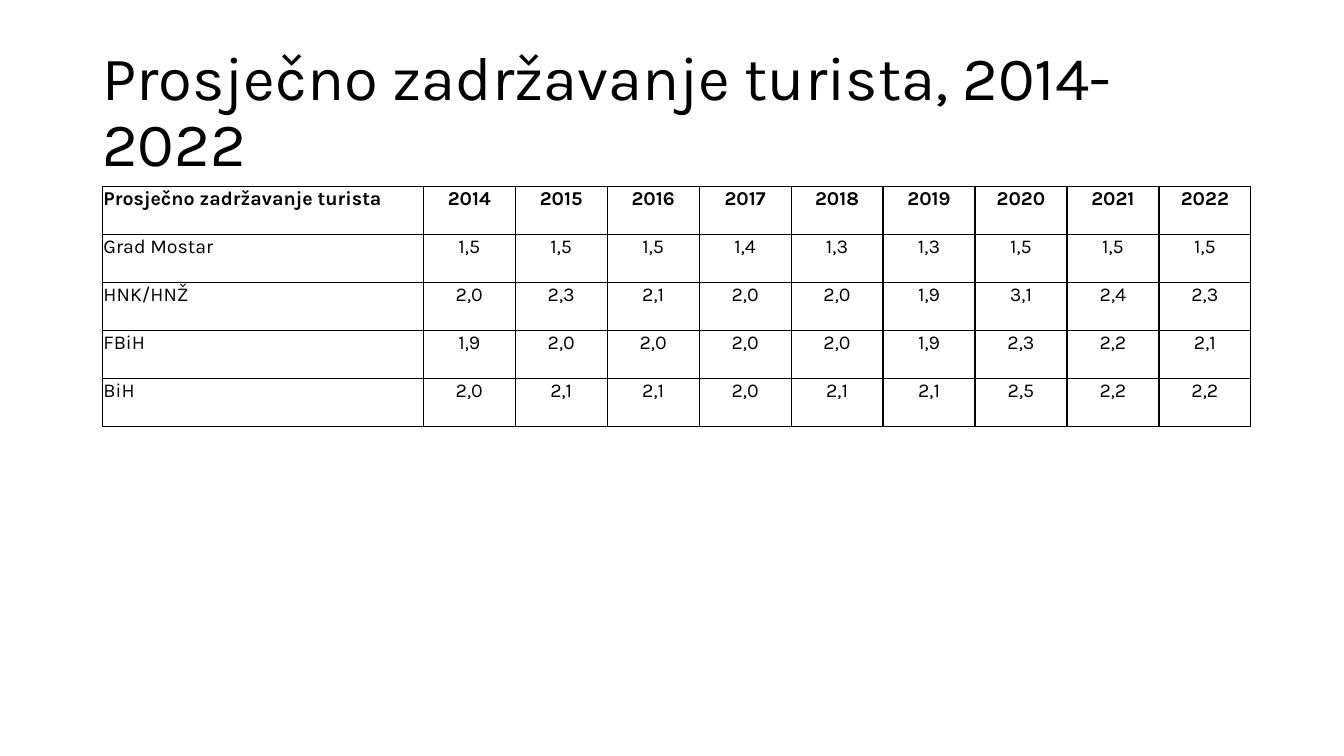
from lxml.etree import SubElement
from pptx import Presentation
from pptx.dml.color import RGBColor
from pptx.enum.text import MSO_ANCHOR as Anchor, PP_ALIGN as Align
from pptx.oxml import parse_xml
from pptx.oxml.ns import nsdecls, qn
from pptx.util import Pt

YEARS = [str(year) for year in range(2014, 2023)]
STAYS = {
    "Grad Mostar": "1,5 1,5 1,5 1,4 1,3 1,3 1,5 1,5 1,5",
    "HNK/HNŽ": "2,0 2,3 2,1 2,0 2,0 1,9 3,1 2,4 2,3",
    "FBiH": "1,9 2,0 2,0 2,0 2,0 1,9 2,3 2,2 2,1",
    "BiH": "2,0 2,1 2,1 2,0 2,1 2,1 2,5 2,2 2,2",
}


def color(value):
    return RGBColor.from_string(value)


class SlideBuilder:
    """Hold the style and the current slide, and add its elements."""

    font = "Karla"
    ink = "000000"
    title_size = 44
    cell_size = 14
    border_width = 1

    def __init__(self, slide):
        self.slide = slide

    def format_text(self, paragraph, size, bold=False):
        for run in paragraph.runs:
            run.font.name = self.font
            run.font.size = Pt(size)
            run.font.bold = bold
            run.font.color.rgb = color(self.ink)

    def title(self, text, left, top, width, height):
        shape = self.slide.shapes.add_textbox(Pt(left), Pt(top), Pt(width), Pt(height))
        frame = shape.text_frame
        frame.word_wrap = True
        frame.vertical_anchor = Anchor.MIDDLE
        frame.text = text
        paragraph = frame.paragraphs[0]
        paragraph.line_spacing = 0.9
        self.format_text(paragraph, self.title_size)

    def border(self, cell):
        properties = cell._tc.get_or_add_tcPr()
        for position, side in enumerate(("lnL", "lnR", "lnT", "lnB")):
            line = parse_xml(f'<a:{side} {nsdecls("a")} w="{Pt(self.border_width)}"/>')
            fill = SubElement(line, qn("a:solidFill"))
            SubElement(fill, qn("a:srgbClr"), val=self.ink)
            properties.insert(position, line)

    def cell(self, cell, text, align, bold):
        cell.fill.background()
        cell.margin_left = cell.margin_right = cell.margin_top = Pt(0.75)
        cell.margin_bottom = 0
        cell.vertical_anchor = Anchor.TOP
        cell.text_frame.text = text
        paragraph = cell.text_frame.paragraphs[0]
        paragraph.alignment = align
        self.format_text(paragraph, self.cell_size, bold)
        self.border(cell)

    def table(self, rows, left, top, column_widths, row_height):
        table = self.slide.shapes.add_table(
            len(rows), len(column_widths), Pt(left), Pt(top),
            Pt(sum(column_widths)), Pt(row_height * len(rows))
        ).table
        for column, width in zip(table.columns, column_widths):
            column.width = Pt(width)
        for row_index, texts in enumerate(rows):
            table.rows[row_index].height = Pt(row_height)
            for column_index, text in enumerate(texts):
                align = Align.CENTER if column_index else Align.LEFT
                self.cell(table.cell(row_index, column_index), text, align, row_index == 0)


def main():
    presentation = Presentation()
    presentation.slide_width = Pt(960)
    presentation.slide_height = Pt(540)
    builder = SlideBuilder(presentation.slides.add_slide(presentation.slide_layouts[6]))

    builder.title("Prosječno zadržavanje turista, 2014-2022", 66, 28.75, 828, 104.4)
    rows = [["Prosječno zadržavanje turista", *YEARS]]
    rows += [[region, *values.split()] for region, values in STAYS.items()]
    builder.table(rows, 73.2, 133.2, [229.2] + [65.7] * len(YEARS), 34.3)

    presentation.save("out.pptx")


if __name__ == "__main__":
    main()
